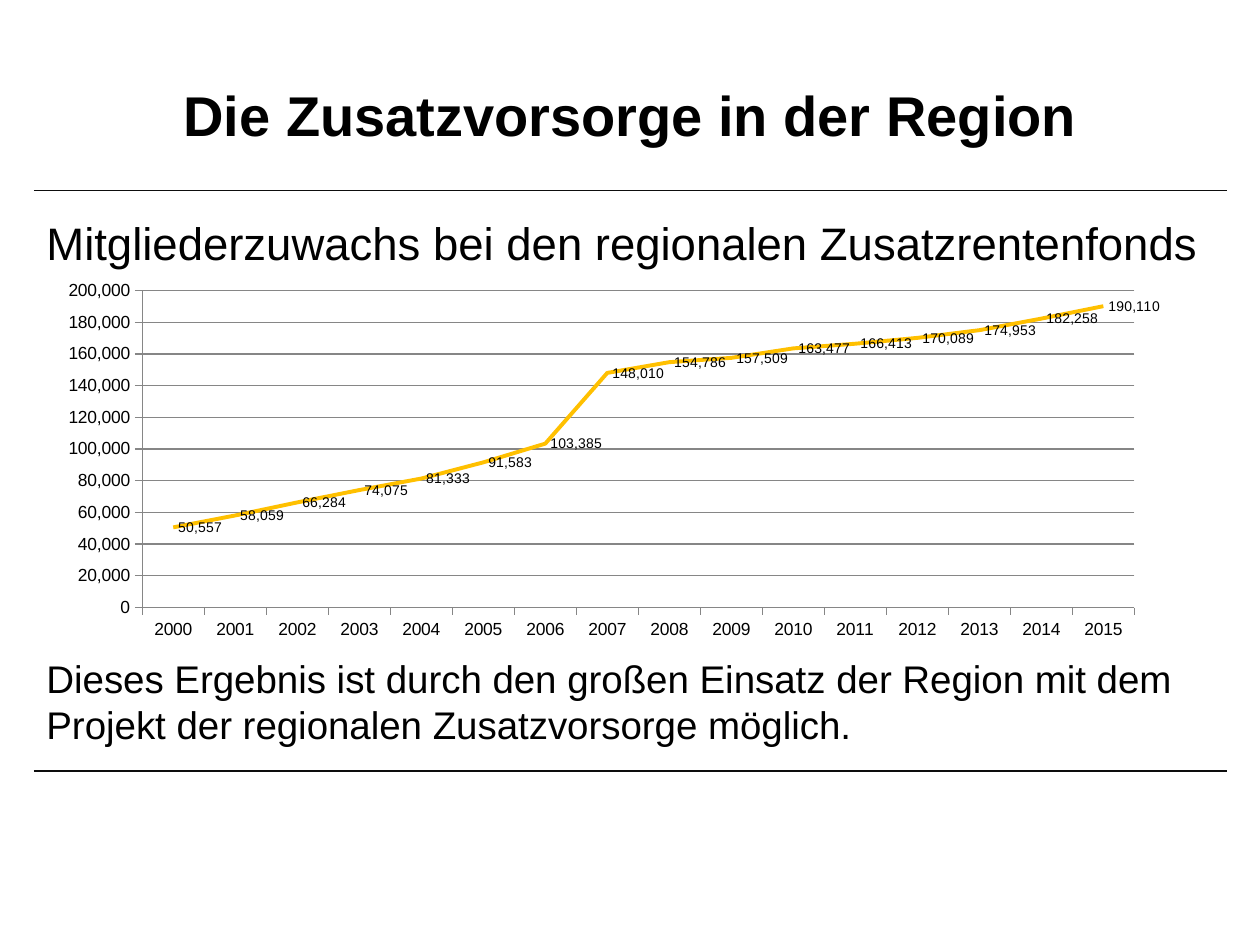
from lxml import etree
from pptx import Presentation
from pptx.chart.data import CategoryChartData
from pptx.dml.color import RGBColor
from pptx.enum.chart import XL_CHART_TYPE as ChartType, XL_LABEL_POSITION as LabelPos
from pptx.enum.chart import XL_MARKER_STYLE as Marker, XL_TICK_MARK as Tick
from pptx.enum.shapes import MSO_CONNECTOR as Connector
from pptx.enum.text import MSO_ANCHOR as Anchor, PP_ALIGN as Align
from pptx.oxml.ns import qn
from pptx.util import Inches, Pt

# Content
TITLE = "Die Zusatzvorsorge in der Region"
HEADING = "Mitgliederzuwachs bei den regionalen Zusatzrentenfonds"
RESULT = ("Dieses Ergebnis ist durch den großen Einsatz der Region mit dem "
          "Projekt der regionalen Zusatzvorsorge möglich.")
FIRST_YEAR = 2000
MEMBERS = [50557, 58059, 66284, 74075, 81333, 91583, 103385, 148010,
           154786, 157509, 163477, 166413, 170089, 174953, 182258, 190110]

# Style and layout, in inches
FONT = "Arial"
COLORS = {"text": "000000", "rule": "0D0D0D", "grid": "868686", "line": "FFC000"}
LEFT, WIDTH = 0.27, 9.47
RULES = (1.51, 6.12)
TEXTS = [(HEADING, 1.66, 0.52, 26), (RESULT, 5.15, 0.9, 22)]
CHART_BOX = (0.43, 2.18, 8.78, 3)
PLOT = {"x": 0.08, "y": 0.042, "w": 0.901, "h": 0.839}  # shares of the chart


def color(name):
    return RGBColor.from_string(COLORS[name])


def set_font(font, size, bold=False):
    font.name, font.size, font.bold = FONT, Pt(size), bold
    font.color.rgb = color("text")


def set_line(line, name, width):
    line.color.rgb = color(name)
    line.width = Pt(width)


def add_rule(slide, y):
    right = LEFT + WIDTH
    rule = slide.shapes.add_connector(
        Connector.STRAIGHT, *map(Inches, (LEFT, y, right, y)))
    set_line(rule.line, "rule", 0.75)
    etree.SubElement(rule._element.spPr, qn("a:effectLst"))


def add_text(slide, text, top, height, size):
    sp = slide.shapes.add_textbox(*map(Inches, (LEFT, top, 9.73, height)))
    tf = sp.text_frame
    tf.word_wrap = True
    p = tf.paragraphs[0]
    p.text = text
    set_font(p.font, size)


def place_plot(chart):
    area = chart._chartSpace.find(".//" + qn("c:plotArea"))
    for old in area.findall(qn("c:layout")):
        area.remove(old)
    layout = etree.Element(qn("c:layout"))
    manual = etree.SubElement(layout, qn("c:manualLayout"))
    settings = {"layoutTarget": "inner", "xMode": "edge", "yMode": "edge", **PLOT}
    for tag, value in settings.items():
        etree.SubElement(manual, qn("c:" + tag)).set("val", str(value))
    area.insert(0, layout)


def add_member_chart(slide):
    data = CategoryChartData(number_format="#,##0")
    data.categories = [str(FIRST_YEAR + i) for i in range(len(MEMBERS))]
    data.add_series("Series 1", MEMBERS)
    chart = slide.shapes.add_chart(
        ChartType.LINE, *map(Inches, CHART_BOX), data).chart
    chart.has_legend = chart.has_title = False
    set_font(chart.font, 10)
    place_plot(chart)

    # Axes
    for axis in (chart.category_axis, chart.value_axis):
        axis.major_tick_mark, axis.minor_tick_mark = Tick.OUTSIDE, Tick.NONE
        set_line(axis.format.line, "grid", 0.75)
    values = chart.value_axis
    values.minimum_scale, values.maximum_scale, values.major_unit = 0, 200000, 20000
    values.tick_labels.number_format = "#,##0"
    values.tick_labels.number_format_is_linked = False
    set_line(values.major_gridlines.format.line, "grid", 0.75)

    # Series and its labels
    plot = chart.plots[0]
    plot.vary_by_categories = False
    series = plot.series[0]
    series.smooth = False
    series.marker.style = Marker.NONE
    set_line(series.format.line, "line", 2.25)
    labels = series.data_labels
    labels.show_value = True
    labels.position = LabelPos.RIGHT
    labels.number_format, labels.number_format_is_linked = "#,##0", False
    set_font(labels.font, 8)


def main():
    prs = Presentation()
    prs.slide_width, prs.slide_height = Inches(10), Inches(7.5)
    slide = prs.slides.add_slide(prs.slide_layouts[5])

    # Title
    title = slide.shapes.title
    title.left, title.top, title.width, title.height = map(
        Inches, (LEFT, 0.28, WIDTH, 1.25))
    title.text_frame.vertical_anchor = Anchor.MIDDLE
    p = title.text_frame.paragraphs[0]
    p.text, p.alignment = TITLE, Align.CENTER
    set_font(p.font, 32, bold=True)

    # Rules, text and chart
    for y in RULES:
        add_rule(slide, y)
    for item in TEXTS:
        add_text(slide, *item)
    add_member_chart(slide)
    prs.save("out.pptx")


if __name__ == "__main__":
    main()
